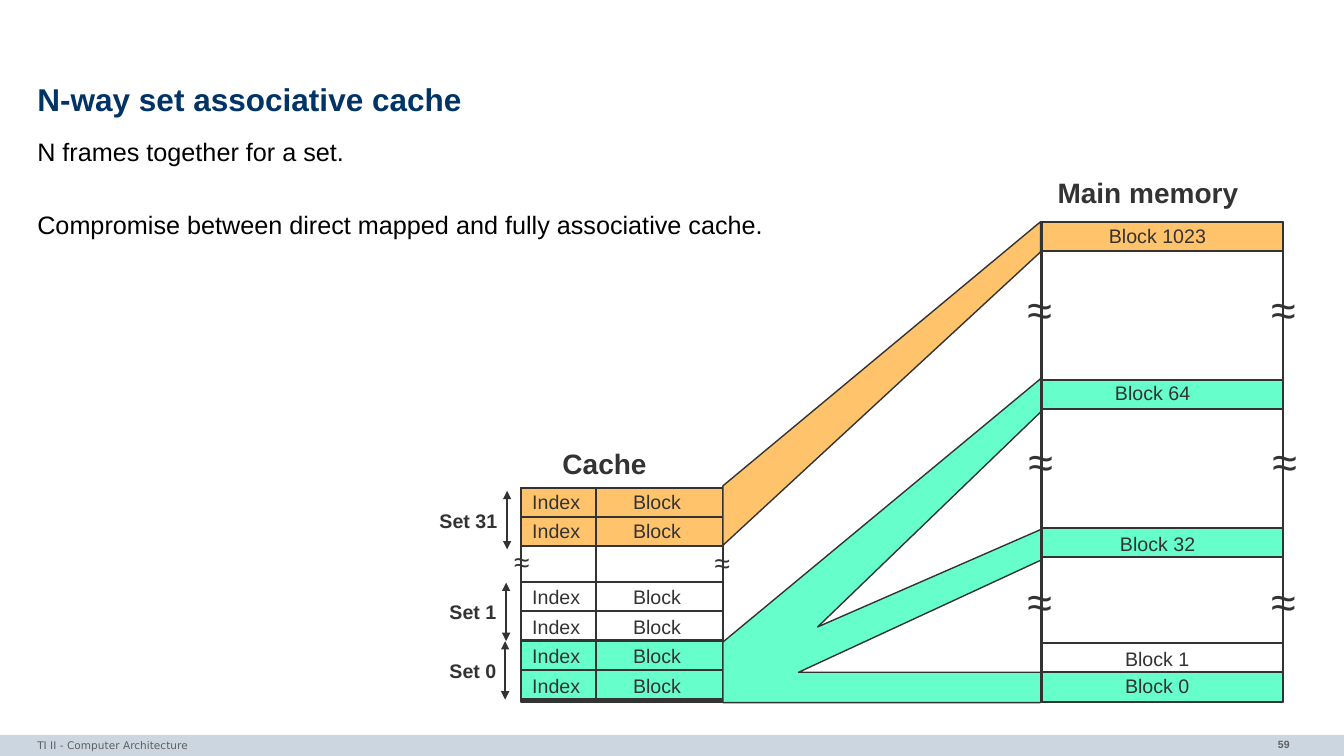
from dataclasses import dataclass
from typing import Optional

from lxml import etree
from pptx import Presentation, util as u
from pptx.dml.color import RGBColor
from pptx.enum import shapes as sh, text as tx
from pptx.oxml import ns

PX = 9144  # one px is 1/100 inch
HUES = {"ink": "333333", "navy": "003366", "black": "000000", "white": "FFFFFF",
        "grey": "5F5F5F", "bar": "CCD6E0", "mint": "66FFCC", "gold": "FFC36B"}


@dataclass
class Label:
    text: str
    x: int
    y: int
    w: int
    h: int = 34
    size: float = 14
    bold: bool = False
    hue: str = "ink"
    face: str = "Arial"
    tab: int = 0


@dataclass
class Box:
    x: int
    y: int
    w: int
    h: int = 29
    fill: Optional[str] = None
    line: Optional[str] = "ink"


@dataclass
class Band:
    fill: str
    points: list
    close: bool


@dataclass
class Line:
    start: tuple
    end: tuple
    width: float = 1.5
    heads: bool = False


def color(hue: str) -> RGBColor:
    return RGBColor.from_string(HUES[hue])


def place(shape, x: int, y: int, w: int, h: int) -> None:
    shape.left, shape.top, shape.width, shape.height = (n * PX for n in (x, y, w, h))


def style(par, size: float, hue: str, bold: bool = False, face: str = "Arial") -> None:
    font = par.font
    font.size, font.bold, font.name = u.Pt(size), bold, face
    font.color.rgb = color(hue)


def pad(frame, side: int, edge: int) -> None:
    frame.margin_left = frame.margin_right = side * PX
    frame.margin_top = frame.margin_bottom = edge * PX


def paint(shape, fill: Optional[str], line: Optional[str], width: float) -> None:
    shape.shadow.inherit = False
    if fill:
        shape.fill.solid()
        shape.fill.fore_color.rgb = color(fill)
    else:
        shape.fill.background()
    if line:
        shape.line.color.rgb = color(line)
        shape.line.width = u.Pt(width)
    else:
        shape.line.fill.background()


def draw_box(slide, box: Box) -> None:
    shape = slide.shapes.add_shape(sh.MSO_SHAPE.RECTANGLE, 0, 0, 0, 0)
    place(shape, box.x, box.y, box.w, box.h)
    paint(shape, box.fill, box.line, 1.5)


def draw_band(slide, band: Band) -> None:
    path = slide.shapes.build_freeform(*band.points[0], scale=PX)
    path.add_line_segments(band.points[1:], close=band.close)
    paint(path.convert_to_shape(), band.fill, "ink", 1)


def draw_line(slide, line: Line) -> None:
    ends = [n * PX for n in line.start + line.end]
    link = slide.shapes.add_connector(sh.MSO_CONNECTOR.STRAIGHT, *ends)
    link.line.color.rgb = color("ink")
    link.line.width = u.Pt(line.width)
    if line.heads:
        for tag in ("a:headEnd", "a:tailEnd"):
            etree.SubElement(link.line._get_or_add_ln(), ns.qn(tag), type="triangle")
    etree.SubElement(link._element.spPr, ns.qn("a:effectLst"))


def draw_label(slide, item: Label):
    box = slide.shapes.add_textbox(0, 0, 0, 0)
    place(box, item.x, item.y, item.w, item.h)
    frame = box.text_frame
    frame.word_wrap = False
    frame.auto_size = tx.MSO_AUTO_SIZE.SHAPE_TO_FIT_TEXT
    par = frame.paragraphs[0]
    par.text = item.text
    if item.tab:
        tabs = etree.SubElement(par._p.get_or_add_pPr(), ns.qn("a:tabLst"))
        etree.SubElement(tabs, ns.qn("a:tab"), pos=str(item.tab * PX), algn="l")
    style(par, item.size, item.hue, item.bold, item.face)
    return frame


def draw_strip(slide, item: Label):
    frame = draw_label(slide, item)
    frame.auto_size = tx.MSO_AUTO_SIZE.NONE
    frame.word_wrap = True
    return frame


def fill_holder(shape, area: tuple, lines: list, size: float, hue: str,
                bold: bool, lead: float, gap: float) -> None:
    place(shape, *area)
    frame = shape.text_frame
    pad(frame, 0, 0)
    frame.word_wrap = True
    frame.auto_size = tx.MSO_AUTO_SIZE.NONE
    frame.text = "\n".join(lines)
    for i, par in enumerate(frame.paragraphs):
        par.alignment = tx.PP_ALIGN.LEFT
        par.line_spacing = lead
        par.space_before = u.Pt(gap if i else 0)
        props = par._p.get_or_add_pPr()
        props.set("marL", "0")
        props.set("indent", "0")
        etree.SubElement(props, ns.qn("a:buNone"))
        style(par, size, hue, bold)


# Geometry of the two memories
CACHE, CW = 517, 200
MAIN, MW = 1033, 240
ROWS = [(484, 481, "gold"), (513, 510, "gold"), (577, 575, None),
        (606, 605, None), (636, 634, "mint"), (665, 664, "mint")]
BLOCKS = [("Block 1023", 220, "gold", 1090, 217, 117), ("Block 64", 377, "mint", 1096, 373, 95),
          ("Block 32", 524, "mint", 1101, 523, 95), ("Block 1", 638, None, 1106, 637, 85),
          ("Block 0", 667, "mint", 1106, 664, 85)]
SETS = [("Set 31", 426, 500, 78, 503, 487), ("Set 1", 436, 590, 67, 502, 578),
        ("Set 0", 436, 649, 67, 501, 636)]
BREAKS = [(1009, 275), (1010, 425), (1009, 564)]
BANDS = [
    Band("mint", [(1032, 667), (792, 667), (1034, 555), (1033, 525), (811, 622), (1034, 407),
                  (1033, 375), (717, 637), (717, 697), (1032, 697)], False),
    Band("gold", [(1032, 220), (717, 482), (717, 541), (1032, 250)], True),
]


def main() -> None:
    deck = Presentation()
    deck.slide_width, deck.slide_height = 1333 * PX, 750 * PX
    slide = deck.slides.add_slide(deck.slide_layouts[1])

    # Footer
    draw_box(slide, Box(0, 729, 1333, 21, "bar", None))
    page = draw_strip(slide, Label("59", 1110, 727, 179, 26, 7.5, True, "grey"))
    page.paragraphs[0].alignment = tx.PP_ALIGN.RIGHT
    foot = draw_strip(slide, Label("TI II - Computer Architecture", 37, 728, 872, 25, 7.5,
                                   hue="grey", face="DejaVu Sans"))
    pad(foot, 0, 5)

    # Title and body
    title, body = slide.placeholders
    fill_holder(title, (37, 78, 1260, 47), ["N-way set associative cache"],
                22.5, "navy", True, 0.85, 0)
    title.text_frame.vertical_anchor = tx.MSO_ANCHOR.MIDDLE
    fill_holder(body, (37, 135, 1260, 574),
                ["N frames together for a set.",
                 "Compromise between direct mapped and fully associative cache."],
                18, "black", False, 1.02, 29.5)

    # Cache
    for top, _, fill in ROWS:
        draw_box(slide, Box(CACHE, top, CW, fill=fill))
    draw_box(slide, Box(CACHE, 484, CW, 212))
    draw_line(slide, Line((591, 695), (591, 485)))
    for _, top, _ in ROWS:
        draw_label(slide, Label("Index\tBlock", 518, top, 175, tab=100))
    draw_label(slide, Label("Cache", 548, 438, 105, 44, 20, True))
    for x, y in ((500, 535), (699, 536)):
        draw_label(slide, Label("≈", x, y, 36, 44, 20))

    # Main memory and the bands that map it to the cache
    draw_line(slide, Line((1036, 696), (714, 696)))
    draw_band(slide, BANDS[0])
    draw_box(slide, Box(MAIN, 220, MW, 476, "white"))
    for name, top, fill, x, y, w in BLOCKS:
        draw_box(slide, Box(MAIN, top, MW, fill=fill))
        draw_label(slide, Label(name, x, y, w))
    draw_band(slide, BANDS[1])
    draw_label(slide, Label("Main memory", 1039, 169, 201, 44, 20, True))
    for x, y in BREAKS:
        for side in (x, x + 242):
            draw_label(slide, Label("≈", side, y, 45, 64, 32))

    # Set marks
    for name, x, y, w, mid, top in SETS:
        draw_line(slide, Line((mid, top), (mid, top + 58), 1, True))
        draw_label(slide, Label(name, x, y, w, bold=True))

    deck.save("out.pptx")


if __name__ == "__main__":
    main()
